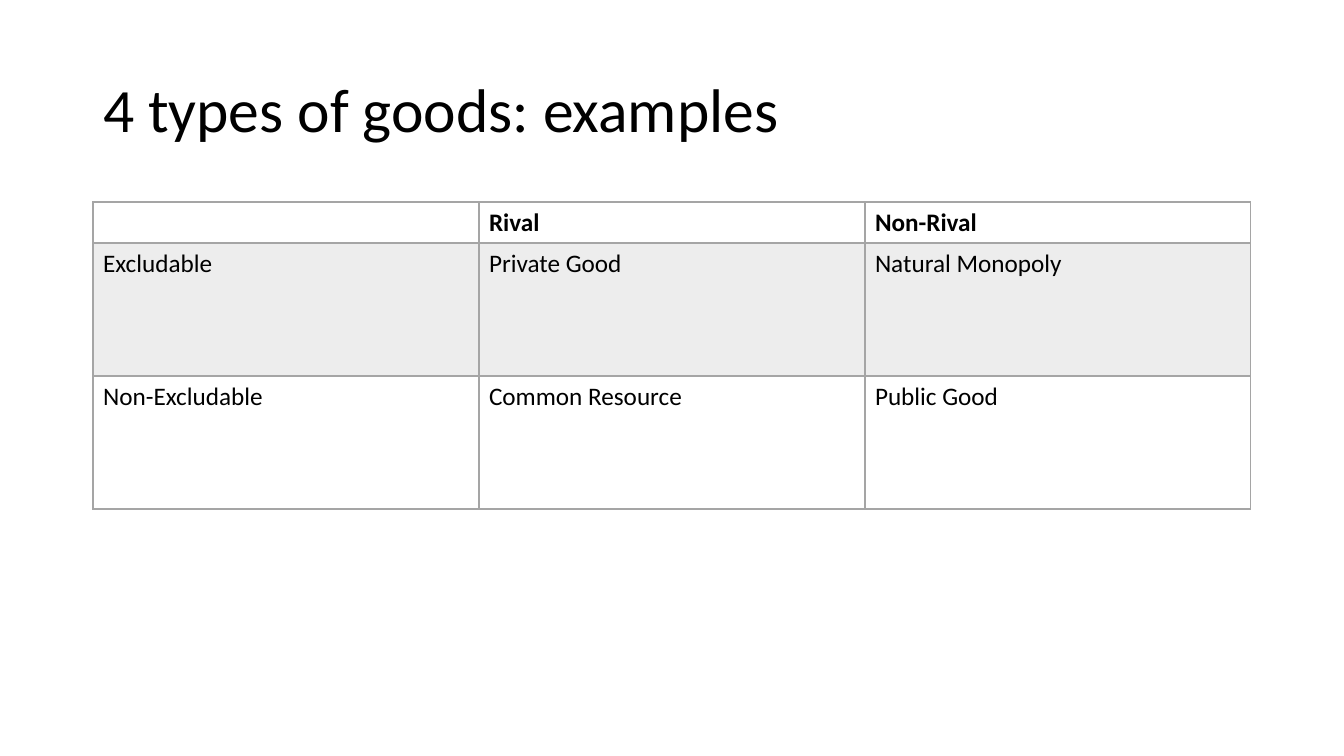
"""Build the slide that names the four types of goods in a table."""
from lxml.etree import SubElement
from pptx import Presentation
from pptx.dml.color import RGBColor
from pptx.enum.text import MSO_ANCHOR, MSO_AUTO_SIZE, PP_ALIGN
from pptx.oxml.ns import qn
from pptx.util import Emu, Pt

TITLE = "4 types of goods: examples"
GOODS = [
    ["", "Rival", "Non-Rival"],
    ["Excludable", "Private Good", "Natural Monopoly"],
    ["Non-Excludable", "Common Resource", "Public Good"],
]
COLORS = {"text": "000000", "border": "A5A5A5", "band": "EDEDED"}
FONT = "Calibri"

PAGE_SIZE = (1344, 756)
LEFT = 93
COLUMN_WIDTH = 386
WIDTH = COLUMN_WIDTH * len(GOODS[0])
TITLE_TOP, TITLE_HEIGHT = 40, 146
TABLE_TOP = 202
ROW_HEIGHTS = [41, 133, 133]


def px(length):
    return Emu(round(length * 914400 / 100.8))


def add_text(para, text, size, bold=False):
    span = para.add_run()
    span.text = text
    span.font.name = FONT
    span.font.size = Pt(size)
    span.font.bold = bold
    span.font.color.rgb = RGBColor.from_string(COLORS["text"])


def set_borders(cell, widths):
    properties = cell._tc.get_or_add_tcPr()
    for position, (side, width) in enumerate(widths.items()):
        line = SubElement(properties, qn(f"a:ln{side}"), w=str(Pt(width)))
        fill = SubElement(line, qn("a:solidFill"))
        SubElement(fill, qn("a:srgbClr"), val=COLORS["border"])
        properties.insert(position, line)


def add_title(page):
    title = page.shapes.title
    title.left, title.top = px(LEFT), px(TITLE_TOP)
    title.width, title.height = px(WIDTH), px(TITLE_HEIGHT)
    frame = title.text_frame
    frame.auto_size = MSO_AUTO_SIZE.NONE
    frame.vertical_anchor = MSO_ANCHOR.MIDDLE
    para = frame.paragraphs[0]
    para.alignment = PP_ALIGN.LEFT
    para.line_spacing = 0.9
    add_text(para, TITLE, 44)


def add_goods_table(page):
    table = page.shapes.add_table(
        len(GOODS), len(GOODS[0]), px(LEFT), px(TABLE_TOP), px(WIDTH), px(sum(ROW_HEIGHTS))
    ).table
    table.horz_banding = False
    for column in table.columns:
        column.width = px(COLUMN_WIDTH)
    for index, labels in enumerate(GOODS):
        table.rows[index].height = px(ROW_HEIGHTS[index])
        for number, label in enumerate(labels):
            cell = table.cell(index, number)
            if index == 1:
                cell.fill.solid()
                cell.fill.fore_color.rgb = RGBColor.from_string(COLORS["band"])
            else:
                cell.fill.background()
            top = 2 if index == 1 else 1
            bottom = 2 if index == 0 else 1
            set_borders(cell, {"L": 1, "R": 1, "T": top, "B": bottom})
            if label:
                add_text(cell.text_frame.paragraphs[0], label, 18, bold=index == 0)


def main():
    deck = Presentation()
    deck.slide_width, deck.slide_height = map(px, PAGE_SIZE)
    page = deck.slides.add_slide(deck.slide_layouts[5])
    add_title(page)
    add_goods_table(page)
    deck.save("out.pptx")


if __name__ == "__main__":
    main()
